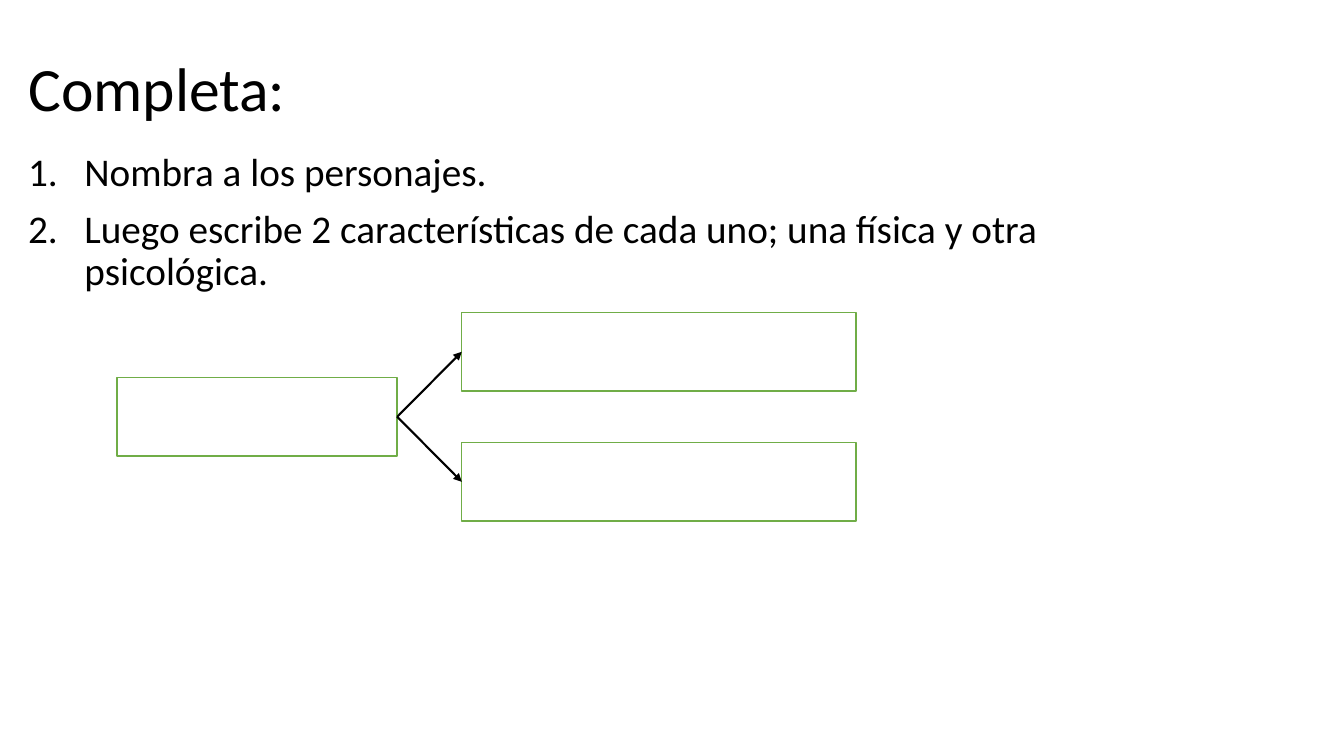
from dataclasses import dataclass

from lxml.etree import SubElement
from pptx import Presentation
from pptx.dml.color import RGBColor as Color
from pptx.enum.shapes import MSO_CONNECTOR as Link, MSO_SHAPE as Form
from pptx.enum.text import MSO_ANCHOR as Anchor, MSO_AUTO_SIZE as Fit, PP_ALIGN as Align
from pptx.oxml.ns import qn
from pptx.util import Inches, Pt


@dataclass(frozen=True)
class Theme:
    """Colours, font and sizes of the slide."""
    ink: Color = Color(0, 0, 0)
    paper: Color = Color(255, 255, 255)
    green: Color = Color(0x70, 0xAD, 0x47)
    font: str = "Calibri"
    head: int = 44
    body: int = 28


THEME = Theme()


def place(shape, box):
    """Move a shape to a box given in inches."""
    shape.left, shape.top, shape.width, shape.height = map(Inches, box)


def style(para, size):
    """Format a paragraph and its runs."""
    para.alignment = Align.LEFT
    para.line_spacing = 0.9
    for run in para.runs:
        run.font.name = THEME.font
        run.font.size = Pt(size)
        run.font.color.rgb = THEME.ink


def add_title(slide, box, text):
    """Fill the title placeholder."""
    title = slide.shapes.title
    place(title, box)
    frame = title.text_frame
    frame.text = text
    frame.auto_size = Fit.NONE
    frame.vertical_anchor = Anchor.MIDDLE
    style(frame.paragraphs[0], THEME.head)


def add_steps(slide, box, steps):
    """Write a numbered list of steps."""
    frame = slide.shapes.add_textbox(*map(Inches, box)).text_frame
    frame.word_wrap = True
    frame.text = "\n".join(steps)
    indent = Inches(0.56)
    for para in frame.paragraphs:
        style(para, THEME.body)
        para.space_before = Pt(10)
        props = para._p.get_or_add_pPr()
        props.set("marL", str(indent))
        props.set("indent", str(-indent))
        SubElement(props, qn("a:buFont"), typeface="+mj-lt")
        SubElement(props, qn("a:buAutoNum"), type="arabicPeriod")


def add_cell(slide, box):
    """Draw one empty answer box."""
    cell = slide.shapes.add_shape(Form.RECTANGLE, *map(Inches, box))
    cell.shadow.inherit = False
    cell.fill.solid()
    cell.fill.fore_color.rgb = THEME.paper
    cell.line.color.rgb = THEME.green
    cell.line.width = Pt(1)
    return cell


def add_arrow(slide, start, end):
    """Join the right side of one box to the left side of another."""
    arrow = slide.shapes.add_connector(Link.STRAIGHT, 0, 0, 0, 0)
    arrow.begin_connect(start, 3)
    arrow.end_connect(end, 1)
    arrow.line.color.rgb = THEME.ink
    arrow.line.width = Pt(1.5)
    SubElement(arrow.line._get_or_add_ln(), qn("a:tailEnd"), type="triangle")
    SubElement(arrow._element.spPr, qn("a:effectLst"))


def add_tree(slide, box):
    """Draw a name box that branches to two trait boxes."""
    left, top, width, height = box
    tall, name, trait = 0.78, 2.78, 3.91
    root = add_cell(slide, (left, top + (height - tall) / 2, name, tall))
    traits = [add_cell(slide, (left + width - trait, y, trait, tall))
              for y in (top, top + height - tall)]
    for cell in traits:
        add_arrow(slide, root, cell)


def main():
    """Build and save the slide."""
    deck = Presentation()
    deck.slide_width, deck.slide_height = Inches(13.33), Inches(7.5)
    slide = deck.slides.add_slide(deck.slide_layouts.get_by_name("Title Only"))
    add_title(slide, (0.18, 0.18, 11.5, 1.45), "Completa:")
    add_steps(slide, (0.18, 1.47, 11.5, 1.63), (
        "Nombra a los personajes.",
        "Luego escribe 2 características de cada uno; una física y otra psicológica.",
    ))
    add_tree(slide, (1.16, 3.1, 7.33, 2.07))
    deck.save("out.pptx")


if __name__ == "__main__":
    main()
